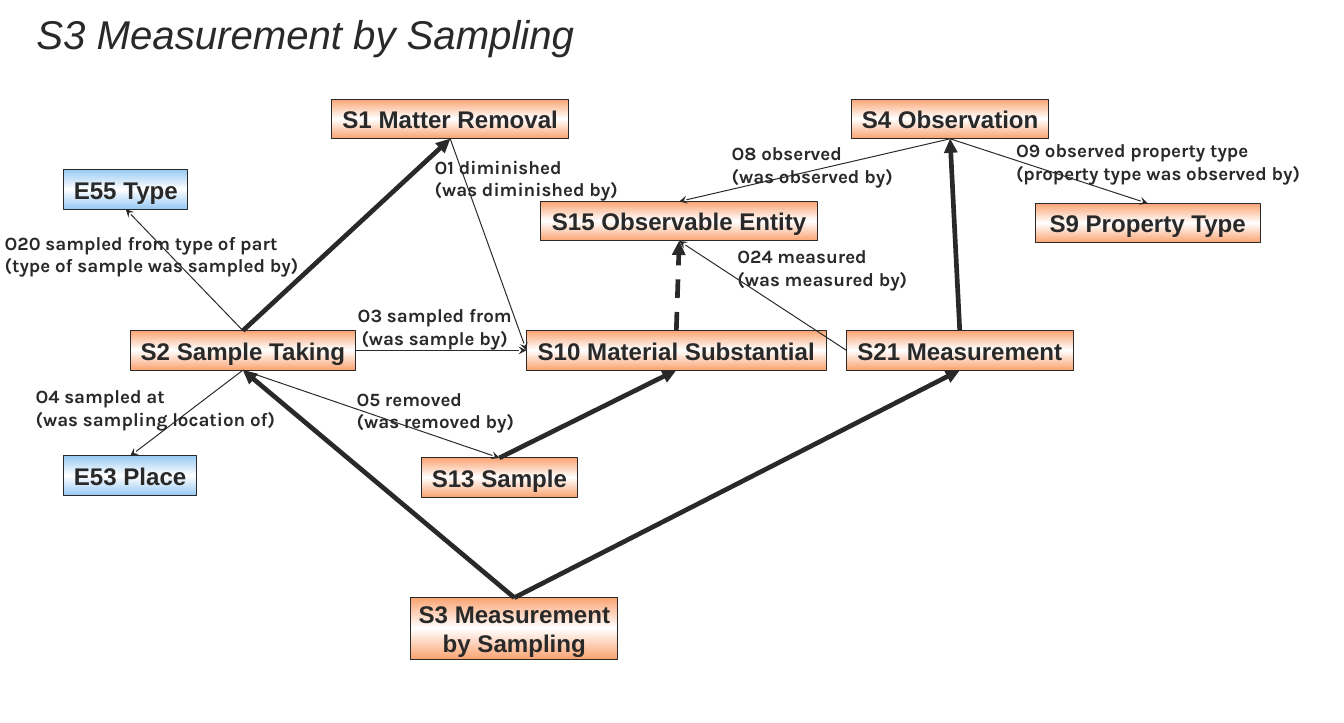
from copy import deepcopy
from enum import IntEnum
from typing import NamedTuple

from lxml.etree import SubElement
from pptx import Presentation
from pptx.dml.color import RGBColor
from pptx.enum.dml import MSO_LINE
from pptx.enum.shapes import MSO_CONNECTOR, MSO_SHAPE
from pptx.enum.text import MSO_ANCHOR, MSO_AUTO_SIZE, PP_ALIGN
from pptx.oxml.ns import qn
from pptx.util import Inches, Pt

COLORS = {"ink": "292929", "orange": "FAA372", "blue": "97C9F3", "middle": "FFFFFF"}
CELL = 0.1  # inches per grid column and row
COLUMNS, ROWS = 139.4, 75
NODE_ROWS = 4.1
LABEL_ROWS = 5.7


class Side(IntEnum):
    TOP = 0
    LEFT = 1
    BOTTOM = 2
    RIGHT = 3


class Node(NamedTuple):
    name: str
    column: float
    row: float
    columns: float
    color: str = "orange"
    rows: float = NODE_ROWS


class Label(NamedTuple):
    forward: str
    inverse: str
    column: float
    row: float
    columns: float
    alignment: PP_ALIGN = PP_ALIGN.LEFT


class Link(NamedTuple):
    source: str
    source_side: Side
    target: str
    target_side: Side


NODES = [
    Node("S1 Matter Removal", 34.4, 10.3, 24.6),
    Node("S4 Observation", 88.3, 10.3, 20.5),
    Node("E55 Type", 6.6, 17.6, 12.9, "blue"),
    Node("S15 Observable Entity", 56.1, 20.9, 28.7),
    Node("S9 Property Type", 107.4, 21.1, 23.3),
    Node("S2 Sample Taking", 13.5, 34.3, 23.4),
    Node("S10 Material Substantial", 54.6, 34.3, 31.1),
    Node("S21 Measurement", 87.8, 34.3, 23.5),
    Node("E53 Place", 6.6, 47.3, 13.8, "blue"),
    Node("S13 Sample", 43.7, 47.5, 16.2),
    Node("S3 Measurement by Sampling", 42.6, 62, 21.5, rows=6.4),
]
LABELS = [
    Label("O1 diminished", "(was diminished by)", 44.1, 15.6, 23.2),
    Label("O8 observed", "(was observed by)", 74.9, 14.2, 20.6),
    Label("O9 observed property type", "(property type was observed by)", 104.4, 13.9, 35),
    Label("O20 sampled from type of part", "(type of sample was sampled by)", -0.5, 23.5, 34.4),
    Label("O24 measured", "(was measured by)", 75.5, 24.9, 22.6),
    Label("O3 sampled from", "(was sample by)", 35.5, 31, 19.2, PP_ALIGN.CENTER),
    Label("O4 sampled at", "(was sampling location of)", 2.7, 39.4, 29.8),
    Label("O5 removed", "(was removed by)", 36, 39.7, 22.4),
]
PROPERTIES = [
    Link("S2", Side.TOP, "E55", Side.BOTTOM),
    Link("S2", Side.BOTTOM, "E53", Side.TOP),
    Link("S2", Side.BOTTOM, "S13", Side.TOP),
    Link("S2", Side.RIGHT, "S10", Side.LEFT),
    Link("S1", Side.BOTTOM, "S10", Side.LEFT),
    Link("S4", Side.BOTTOM, "S9", Side.TOP),
    Link("S4", Side.BOTTOM, "S15", Side.TOP),
    Link("S21", Side.LEFT, "S15", Side.BOTTOM),
]
SUBCLASSES = [
    Link("S2", Side.TOP, "S1", Side.BOTTOM),
    Link("S21", Side.TOP, "S4", Side.BOTTOM),
    Link("S13", Side.TOP, "S10", Side.BOTTOM),
    Link("S3", Side.TOP, "S2", Side.BOTTOM),
    Link("S3", Side.TOP, "S21", Side.BOTTOM),
]
INDIRECT_SUBCLASS = Link("S10", Side.TOP, "S15", Side.BOTTOM)


def grid(cells: float) -> Inches:
    return Inches(cells * CELL)


def rgb(name: str) -> RGBColor:
    return RGBColor.from_string(COLORS[name])


def style_text(paragraph, font_name: str, size: float, alignment: PP_ALIGN) -> None:
    paragraph.alignment = alignment
    paragraph.font.name = font_name
    paragraph.font.size = Pt(size)
    paragraph.font.color.rgb = rgb("ink")


def fill_with_band(shape, color: str) -> None:
    """Fill with a vertical gradient that is white halfway down."""
    shape.fill.gradient()
    shape.fill.gradient_angle = 90
    stop_list = next(shape._element.spPr.iter(qn("a:gsLst")))
    stop_list.insert(1, deepcopy(stop_list[0]))
    bands = zip(shape.fill.gradient_stops, (0, 0.5, 1), (color, "middle", color))
    for stop, position, name in bands:
        stop.position = position
        stop.color.rgb = rgb(name)


def add_title(slide, text: str) -> None:
    title = slide.shapes.title
    title.left, title.top = grid(0), grid(0)
    title.width, title.height = grid(60.6), grid(6.5)
    frame = title.text_frame
    frame.text = text
    frame.auto_size = MSO_AUTO_SIZE.NONE
    frame.vertical_anchor = MSO_ANCHOR.BOTTOM
    style_text(frame.paragraphs[0], "Arial", 30, PP_ALIGN.RIGHT)
    frame.paragraphs[0].font.italic = True


def add_node(slide, node: Node):
    shape = slide.shapes.add_shape(
        MSO_SHAPE.RECTANGLE,
        grid(node.column), grid(node.row), grid(node.columns), grid(node.rows),
    )
    shape.shadow.inherit = False
    fill_with_band(shape, node.color)
    shape.line.color.rgb = rgb("ink")
    shape.line.width = Pt(0.75)
    frame = shape.text_frame
    frame.text = node.name
    frame.word_wrap = node.rows > NODE_ROWS
    frame.margin_left = frame.margin_right = Inches(0.01)
    frame.margin_top = frame.margin_bottom = Inches(0.02)
    frame.vertical_anchor = MSO_ANCHOR.MIDDLE
    style_text(frame.paragraphs[0], "Arial", 18, PP_ALIGN.CENTER)
    frame.paragraphs[0].font.bold = True
    return shape


def add_label(slide, label: Label) -> None:
    box = slide.shapes.add_textbox(
        grid(label.column), grid(label.row), grid(label.columns), grid(LABEL_ROWS)
    )
    frame = box.text_frame
    frame.word_wrap = True
    frame.vertical_anchor = MSO_ANCHOR.MIDDLE
    frame.text = f"{label.forward}\n{label.inverse}"
    for paragraph in frame.paragraphs:
        style_text(paragraph, "Karla", 14, label.alignment)
        paragraph.font.bold = True


def add_arrow(slide, shapes: dict, link: Link, width: float, head: str, dashed: bool = False) -> None:
    connector = slide.shapes.add_connector(MSO_CONNECTOR.STRAIGHT, 0, 0, 0, 0)
    connector.begin_connect(shapes[link.source], link.source_side)
    connector.end_connect(shapes[link.target], link.target_side)
    connector.line.color.rgb = rgb("ink")
    connector.line.width = Pt(width)
    if dashed:
        connector.line.dash_style = MSO_LINE.DASH
    properties = connector._element.spPr
    SubElement(properties.find(qn("a:ln")), qn("a:tailEnd"), type=head)
    SubElement(properties, qn("a:effectLst"))


def main() -> None:
    presentation = Presentation()
    presentation.slide_width, presentation.slide_height = grid(COLUMNS), grid(ROWS)
    slide = presentation.slides.add_slide(presentation.slide_layouts[5])
    add_title(slide, "S3 Measurement by Sampling")
    shapes = {node.name.split()[0]: add_node(slide, node) for node in NODES}
    for link in PROPERTIES:
        add_arrow(slide, shapes, link, 0.75, "stealth")
    for link in SUBCLASSES:
        add_arrow(slide, shapes, link, 3.5, "triangle")
    add_arrow(slide, shapes, INDIRECT_SUBCLASS, 3.5, "triangle", dashed=True)
    for label in LABELS:
        add_label(slide, label)
    presentation.save("out.pptx")


if __name__ == "__main__":
    main()
